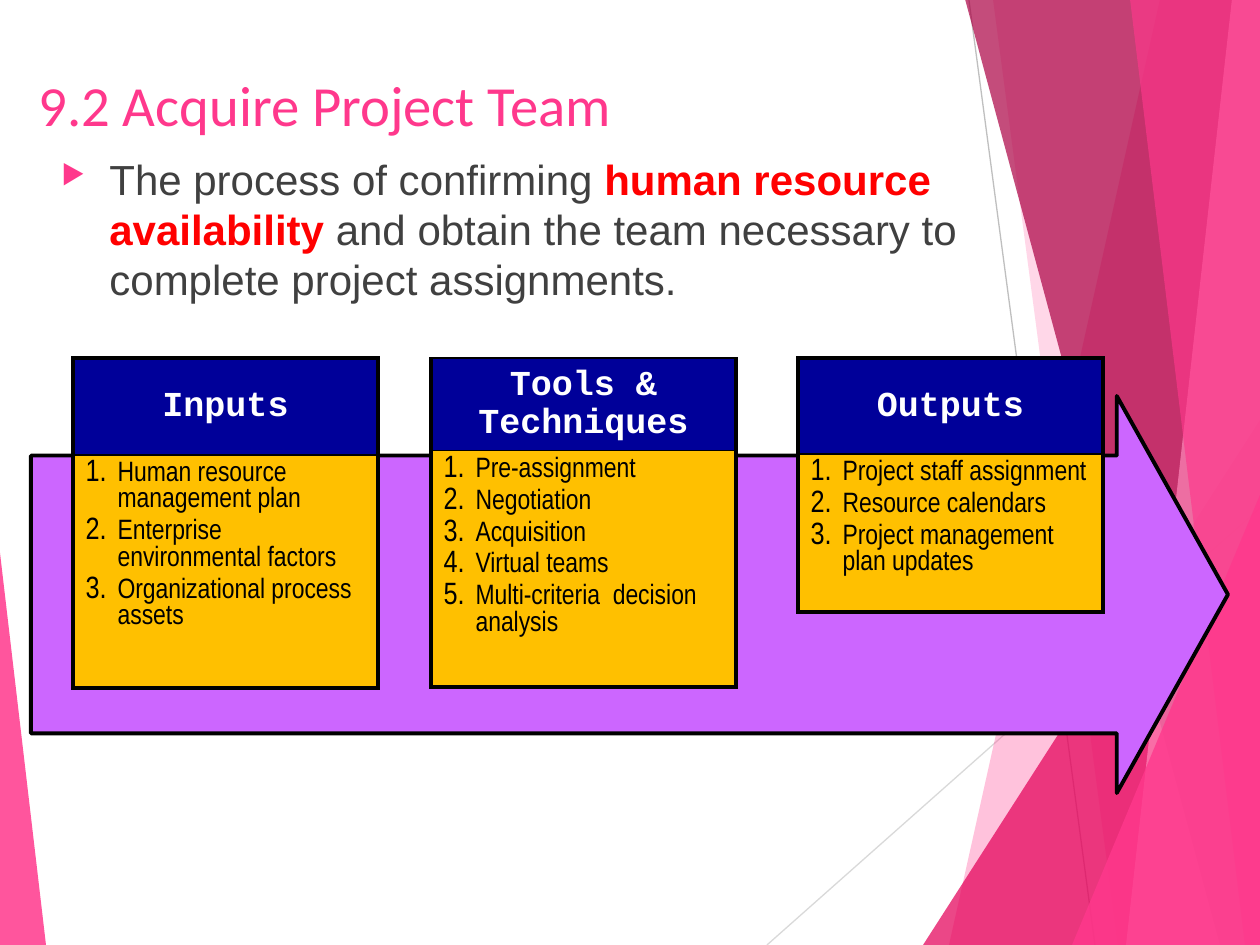
from lxml import etree
from pptx import Presentation, util as u
from pptx.dml.color import RGBColor
from pptx.enum import shapes, text
from pptx.oxml import ns

PX = 914400 / 126
WIDTH, HEIGHT = 1260, 945

PINK = RGBColor(0xFF, 0x38, 0x8C)
LIGHT_PINK = RGBColor(0xFF, 0x88, 0xBA)
MAGENTA = RGBColor(0xE4, 0x00, 0x59)
CRIMSON = RGBColor(0xAB, 0x00, 0x43)
VIOLET = RGBColor(0xCC, 0x66, 0xFF)
NAVY = RGBColor(0x00, 0x00, 0x99)
AMBER = RGBColor(0xFF, 0xC0, 0x00)
RED = RGBColor(0xFF, 0x00, 0x00)
BLACK = RGBColor(0, 0, 0)
WHITE = RGBColor(0xFF, 0xFF, 0xFF)
DARK_GREY = RGBColor(0x40, 0x40, 0x40)
GREY = RGBColor(0xBF, 0xBF, 0xBF)
PALE_GREY = RGBColor(0xD9, 0xD9, 0xD9)

TITLE = {"name": "Calibri", "size": u.Pt(32.4), "color": PINK}
BODY = {"name": "Arial", "size": u.Pt(24), "color": DARK_GREY, "bold": False}
KEY = BODY | {"color": RED, "bold": True}
HEADER = {"name": "Courier New", "size": u.Pt(20), "color": WHITE, "bold": True}
ITEM = {"name": "Arial Narrow", "size": u.Pt(16), "color": BLACK, "bold": False}

RAYS_BACK = [  # points, colour, opacity
    ([(1160, -1), (WIDTH, -1), (WIDTH, HEIGHT), (949, HEIGHT)], PINK, 30),
    ([(993, -1), (WIDTH, -1), (WIDTH, HEIGHT), (1118, HEIGHT)], PINK, 20),
]
RAYS_FRONT = [
    ([(965, -1), (WIDTH, -1), (WIDTH, HEIGHT), (1220, HEIGHT)], CRIMSON, 70),
    ([(1232, -1), (WIDTH, -1), (WIDTH, HEIGHT), (1126, HEIGHT)], LIGHT_PINK, 70),
    ([(1130, -1), (WIDTH, -1), (WIDTH, HEIGHT), (1245, HEIGHT)], PINK, 65),
]
TABLES = [  # left, row heights, top border, header, items
    (73, (97, 233), 2.25, "Inputs",
     ["Human resource management plan", "Enterprise environmental factors",
      "Organizational process assets"]),
    (431, (91, 194), 1, "Tools & Techniques",
     ["Pre-assignment", "Negotiation", "Acquisition", "Virtual teams",
      "Multi-criteria  decision analysis"]),
    (798, (96, 140), 2.25, "Outputs",
     ["Project staff assignment", "Resource calendars",
      "Project management plan updates"]),
]


def px(*lengths):
    return [u.Emu(round(length * PX)) for length in lengths]


def add_element(parent, tag, **attributes):
    return etree.SubElement(parent, ns.qn(tag), attributes)


def paint(shape, color, opacity=100):
    shape.shadow.inherit = False
    shape.fill.solid()
    shape.fill.fore_color.rgb = color
    shape.line.fill.background()
    if opacity < 100:
        tint = shape.fill._xPr.find(".//" + ns.qn("a:srgbClr"))
        add_element(tint, "a:alpha", val=str(opacity * 1000))


def add_line(page, ends, color):
    line = page.shapes.add_connector(shapes.MSO_CONNECTOR.STRAIGHT, *px(*ends))
    line.line.color.rgb = color
    line.line.width = u.Pt(0.75)
    add_element(line._element.spPr, "a:effectLst")


def add_ray(page, points, color, opacity):
    builder = page.shapes.build_freeform(*points[0], scale=PX)
    builder.add_line_segments(points[1:], close=True)
    paint(builder.convert_to_shape(), color, opacity)


def add_preset(page, kind, area, adjustments, color, opacity=100):
    shape = page.shapes.add_shape(kind, *px(*area))
    for index, value in enumerate(adjustments):
        shape.adjustments[index] = value
    paint(shape, color, opacity)
    return shape


def add_span(para, words, style):
    span = para.add_run()
    span.text = words
    for name, value in style.items():
        if name == "color":
            span.font.color.rgb = value
        else:
            setattr(span.font, name, value)


def set_para(para, **values):
    for name, value in values.items():
        setattr(para, name, value)


def add_bullet(para, indent, size, char=None, color=None):
    """Add a hanging bullet; without a character it is a running number."""
    props = para._p.get_or_add_pPr()
    (hang,) = px(indent)
    props.set("marL", str(hang))
    props.set("indent", str(-hang))
    if color is not None:
        add_element(add_element(props, "a:buClr"), "a:srgbClr", val=str(color))
    add_element(props, "a:buSzPct", val=str(size * 1000))
    if char:
        add_element(props, "a:buChar", char=char)
    else:
        add_element(props, "a:buAutoNum", type="arabicPeriod")


def add_text(page, area, spans):
    box = page.shapes.add_textbox(*px(*area))
    box.text_frame.word_wrap = True
    para = box.text_frame.paragraphs[0]
    for words, style in spans:
        add_span(para, words, style)
    return para


def style_cell(cell, color, top, bottom):
    props = cell._tc.get_or_add_tcPr()
    for side, width in {"L": 2.25, "R": 2.25, "T": top, "B": bottom}.items():
        edge = add_element(props, "a:ln" + side, w=str(u.Pt(width)))
        fill = add_element(edge, "a:solidFill")
        add_element(fill, "a:srgbClr", val=str(BLACK))
    cell.fill.solid()
    cell.fill.fore_color.rgb = color


def add_list_table(page, left, heights, top_border, heading, items):
    frame = page.shapes.add_table(2, 1, *px(left, 358, 305, sum(heights)))
    table = frame.table
    table.first_row = table.horz_banding = False
    for row, height in zip(table.rows, px(*heights)):
        row.height = height
    head, body = table.cell(0, 0), table.cell(1, 0)
    style_cell(head, NAVY, top_border, 1)
    style_cell(body, AMBER, 1, 2.25)

    head.vertical_anchor = text.MSO_ANCHOR.MIDDLE
    para = head.text_frame.paragraphs[0]
    set_para(para, alignment=text.PP_ALIGN.CENTER, line_spacing=0.95)
    add_span(para, heading, HEADER)

    for index, item in enumerate(items):
        lines = body.text_frame
        para = lines.add_paragraph() if index else lines.paragraphs[0]
        set_para(para, space_before=u.Pt(3.2), line_spacing=1.0)
        add_bullet(para, 32, 110)
        add_span(para, item, ITEM)


def add_backdrop(page):
    triangle = shapes.MSO_SHAPE.ISOSCELES_TRIANGLE
    add_line(page, (969, 0, 1095, HEIGHT), GREY)
    add_line(page, (WIDTH, 508, 767, HEIGHT), PALE_GREY)
    for ray in RAYS_BACK:
        add_ray(page, *ray)
    add_preset(page, triangle, (923, 420, 337, 525), [1], MAGENTA, 72)
    for ray in RAYS_FRONT:
        add_ray(page, *ray)
    add_preset(page, triangle, (1072, 495, 188, 450), [1], PINK, 80)
    add_preset(page, triangle, (0, 553, 46, 392), [0], PINK, 85)


def main():
    deck = Presentation()
    deck.slide_width, deck.slide_height = px(WIDTH, HEIGHT)
    page = deck.slides.add_slide(deck.slide_layouts[6])
    add_backdrop(page)

    arrow = add_preset(page, shapes.MSO_SHAPE.RIGHT_ARROW,
                       (31, 396, 1197, 397), [0.7, 0.28], VIOLET)
    arrow.line.color.rgb = BLACK
    arrow.line.width = u.Pt(2.25)

    add_text(page, (26, 64, 1050, 53), [("9.2 Acquire Project Team", TITLE)])
    para = add_text(page, (49, 147, 932, 189), [
        ("The process of confirming ", BODY),
        ("human resource availability", KEY),
        (" and obtain the team necessary to complete project assignments.", BODY),
    ])
    set_para(para, space_before=u.Pt(10), line_spacing=1.0)
    add_bullet(para, 48, 64, "▶", PINK)

    for table in TABLES:
        add_list_table(page, *table)
    deck.save("out.pptx")


if __name__ == "__main__":
    main()
